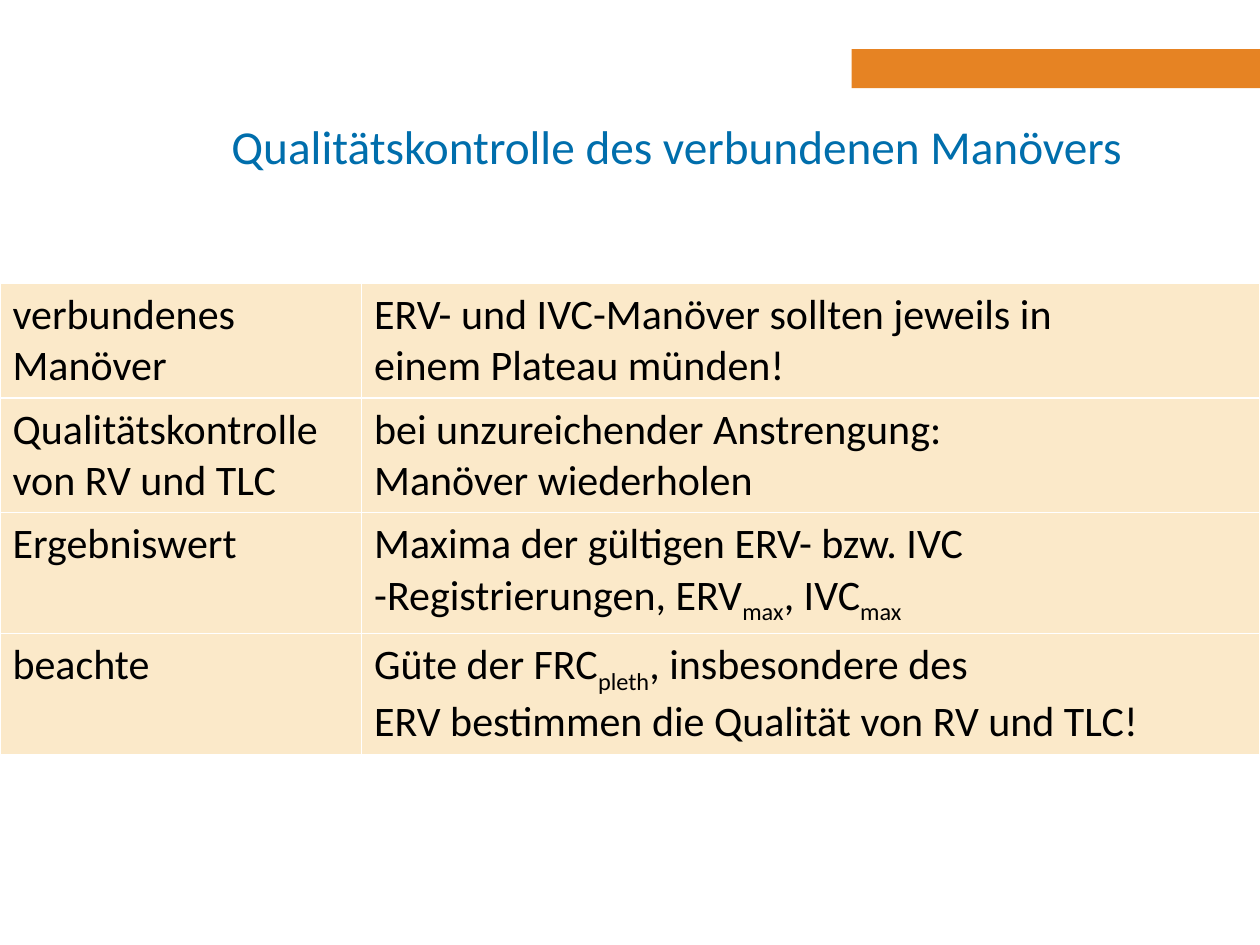
from dataclasses import dataclass

from lxml import etree
from pptx import Presentation
from pptx.dml.color import RGBColor
from pptx.enum.shapes import MSO_SHAPE
from pptx.enum.text import MSO_ANCHOR, PP_ALIGN
from pptx.oxml.ns import qn
from pptx.util import Inches, Pt

RECTANGLE = MSO_SHAPE.RECTANGLE
MIDDLE = MSO_ANCHOR.MIDDLE
CENTER = PP_ALIGN.CENTER


@dataclass(frozen=True)
class Theme:
    font: str = "Calibri"
    title_size: int = 27
    body_size: int = 24
    accent: str = "E68323"
    title: str = "006EAC"
    body: str = "000000"
    cell: str = "FBE9C9"
    border: str = "FFFFFF"


THEME = Theme()

TITLE = "Qualitätskontrolle des verbundenen Manövers"

# Each cell is a list of paragraphs; text between tildes is subscript
CRITERIA = [
    (["verbundenes Manöver"],
     ["ERV- und IVC-Manöver sollten jeweils in", "einem Plateau münden!"]),
    (["Qualitätskontrolle von RV und TLC"],
     ["bei unzureichender Anstrengung:\nManöver wiederholen"]),
    (["Ergebniswert"],
     ["Maxima der gültigen ERV- bzw. IVC -Registrierungen, ERV~max~, IVC~max~"]),
    (["beachte"],
     ["Güte der FRC~pleth~, insbesondere des",
      "ERV bestimmen die Qualität von RV und TLC!"]),
]
COLUMN_WIDTHS = [2.87, 7.13]
ROW_HEIGHTS = [0.47, 0.91, 0.91, 0.96, 0.96]  # empty header row first


def style(paragraph, size, color):
    paragraph.font.name = THEME.font
    paragraph.font.size = Pt(size)
    paragraph.font.color.rgb = RGBColor.from_string(color)


def add_accent_bar(slide):
    bar = slide.shapes.add_shape(
        RECTANGLE, Inches(6.76), Inches(0.39), Inches(3.24), Inches(0.31))
    bar.shadow.inherit = False
    bar.fill.solid()
    bar.fill.fore_color.rgb = RGBColor.from_string(THEME.accent)
    bar.line.fill.background()


def add_title(slide):
    box = slide.shapes.add_textbox(
        Inches(1.48), Inches(0.69), Inches(7.78), Inches(0.93))
    frame = box.text_frame
    frame.word_wrap = True
    frame.vertical_anchor = MIDDLE
    heading = frame.paragraphs[0]
    heading.text = TITLE
    heading.alignment = CENTER
    style(heading, THEME.title_size, THEME.title)


def write_paragraph(paragraph, text):
    for line_index, line in enumerate(text.split("\n")):
        if line_index:
            paragraph.add_line_break()
        for part_index, part in enumerate(line.split("~")):
            if not part:
                continue
            run = paragraph.add_run()
            run.text = part
            if part_index % 2:
                run._r.get_or_add_rPr().set("baseline", "-25000")
    style(paragraph, THEME.body_size, THEME.body)


def add_borders(cell):
    properties = cell._tc.get_or_add_tcPr()
    for position, side in enumerate(("lnL", "lnR", "lnT", "lnB")):
        line = etree.Element(qn(f"a:{side}"), w=str(Pt(1)))
        fill = etree.SubElement(line, qn("a:solidFill"))
        etree.SubElement(fill, qn("a:srgbClr"), val=THEME.border)
        properties.insert(position, line)


def fill_cell(cell, paragraphs):
    cell.fill.solid()
    cell.fill.fore_color.rgb = RGBColor.from_string(THEME.cell)
    frame = cell.text_frame
    for index, text in enumerate(paragraphs):
        paragraph = frame.add_paragraph() if index else frame.paragraphs[0]
        write_paragraph(paragraph, text)


def add_criteria_table(slide):
    table = slide.shapes.add_table(
        len(ROW_HEIGHTS), len(COLUMN_WIDTHS), Inches(0), Inches(1.78),
        Inches(sum(COLUMN_WIDTHS)), Inches(sum(ROW_HEIGHTS))).table
    table.first_row = False
    table.horz_banding = False
    for column, width in zip(table.columns, COLUMN_WIDTHS):
        column.width = Inches(width)
    for row, height in zip(table.rows, ROW_HEIGHTS):
        row.height = Inches(height)

    for header in table.rows[0].cells:
        header.fill.background()
    for row_index, criterion in enumerate(CRITERIA, start=1):
        for column_index, paragraphs in enumerate(criterion):
            fill_cell(table.cell(row_index, column_index), paragraphs)
    for cell in table.iter_cells():
        add_borders(cell)


def main():
    presentation = Presentation()
    presentation.slide_width = Inches(10)
    presentation.slide_height = Inches(7.5)
    slide = presentation.slides.add_slide(presentation.slide_layouts[6])
    add_accent_bar(slide)
    add_title(slide)
    add_criteria_table(slide)
    presentation.save("out.pptx")


if __name__ == "__main__":
    main()
